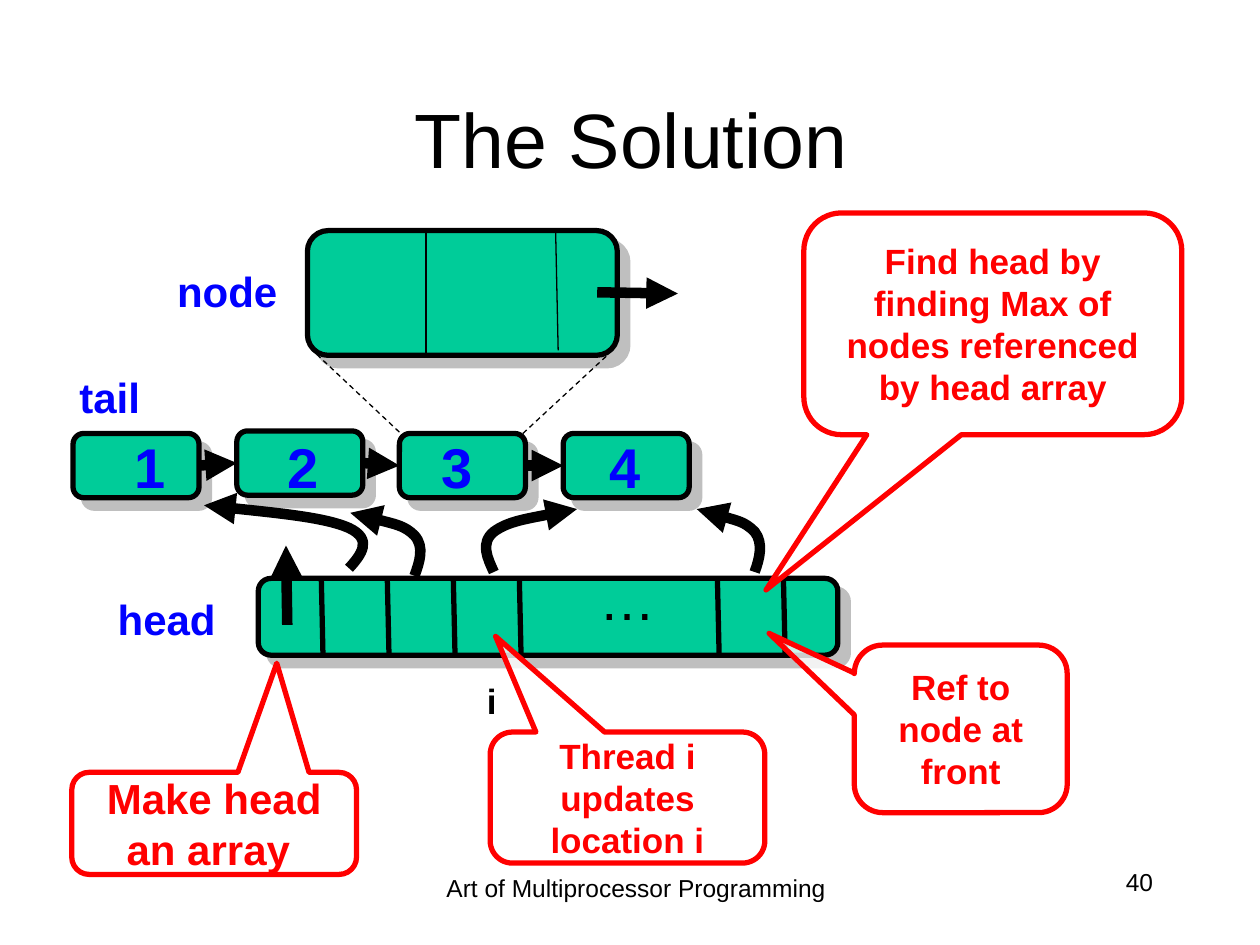
import pptx
import pptx.util
import pptx.dml.color
import pptx.enum.dml
import pptx.enum.shapes
import pptx.enum.text
import pptx.oxml
import pptx.oxml.ns
from lxml import etree

RGBColor = pptx.dml.color.RGBColor
GREEN = RGBColor(0x00, 0xCC, 0x99)
BLACK = RGBColor(0x00, 0x00, 0x00)
BLUE = RGBColor(0x00, 0x00, 0xFF)
RED = RGBColor(0xFF, 0x00, 0x00)
WHITE = RGBColor(0xFF, 0xFF, 0xFF)

SHAPE = pptx.enum.shapes.MSO_SHAPE
ALIGN = pptx.enum.text.PP_ALIGN
ANCHOR = pptx.enum.text.MSO_ANCHOR
qn = pptx.oxml.ns.qn

WIDTH = pptx.util.Inches(10)
HEIGHT = pptx.util.Inches(7.5)
CURVE_ROWS = (60.53, 59.07, 57.47, 56.27, 55.2, 54.53, 53.87)


def across(share):
    return round(WIDTH * share / 100)


def down(share):
    return round(HEIGHT * share / 100)


def frame(x, y, w, h):
    return across(x), down(y), across(w), down(h)


def style_line(s, color, width, arrow=False, dashed=False):
    s.line.color.rgb = color
    s.line.width = pptx.util.Pt(width)
    if dashed:
        s.line.dash_style = pptx.enum.dml.MSO_LINE.DASH
    if arrow:
        ln = s.element.spPr.find(qn("a:ln"))
        etree.SubElement(ln, qn("a:tailEnd"), type="triangle")


def write(tf, text, size, color, bold, align):
    p = tf.paragraphs[0]
    p.alignment = align
    r = p.add_run()
    r.text = text
    r.font.name = "Arial"
    r.font.size = pptx.util.Pt(size)
    r.font.bold = bold
    r.font.color.rgb = color


def add_label(shapes, box, text, size, color=BLUE, bold=True, align=ALIGN.RIGHT,
              wrap=False):
    tf = shapes.add_textbox(*frame(*box)).text_frame
    tf.word_wrap = wrap
    if not wrap:
        tf.auto_size = pptx.enum.text.MSO_AUTO_SIZE.SHAPE_TO_FIT_TEXT
    write(tf, text, size, color, bold, align)
    return tf


def add_block(shapes, *box):
    s = shapes.add_shape(SHAPE.ROUNDED_RECTANGLE, *frame(*box))
    s.fill.solid()
    s.fill.fore_color.rgb = GREEN
    style_line(s, BLACK, 3)
    s.shadow.inherit = False
    effects = s.element.spPr.find(qn("a:effectLst"))
    shadow = etree.SubElement(
        effects, qn("a:outerShdw"), blurRad="0", dist=str(pptx.util.Pt(8.5)),
        dir="2700000", algn="ctr", rotWithShape="0")
    color = etree.SubElement(shadow, qn("a:srgbClr"), val="808080")
    etree.SubElement(color, qn("a:alpha"), val="50000")
    return s


def add_line(shapes, x1, y1, x2, y2, width, arrow=False, dashed=False):
    s = shapes.add_connector(pptx.enum.shapes.MSO_CONNECTOR.STRAIGHT,
                             across(x1), down(y1), across(x2), down(y2))
    style_line(s, BLACK, width, arrow, dashed)
    etree.SubElement(s.element.spPr, qn("a:effectLst"))
    return s


def add_link(shapes, left, right):
    s = add_line(shapes, 0, 0, 1, 1, 6, arrow=True)
    s.begin_connect(left, 3)
    s.end_connect(right, 1)


def add_curve(shapes, columns, shift=0):
    points = [(across(x), down(y + shift)) for x, y in zip(columns, CURVE_ROWS)]
    builder = shapes.build_freeform(*points[0], scale=1.0)
    builder.add_line_segments(points[1:], close=False)
    s = builder.convert_to_shape()
    path = s.element.spPr.find(".//" + qn("a:path"))
    segments = path.findall(qn("a:lnTo"))
    for i in range(0, len(segments), 3):
        curve = etree.SubElement(path, qn("a:cubicBezTo"))
        for segment in segments[i:i + 3]:
            curve.append(segment[0])
            path.remove(segment)
    s.fill.background()
    style_line(s, BLACK, 6, arrow=True)
    s.shadow.inherit = False


def add_callout(shapes, box, tip, text, size):
    s = shapes.add_shape(SHAPE.ROUNDED_RECTANGULAR_CALLOUT, *frame(*box))
    s.adjustments[0], s.adjustments[1] = tip
    s.adjustments[2] = 0.17
    s.fill.solid()
    s.fill.fore_color.rgb = WHITE
    color = s.element.spPr.find(qn("a:solidFill"))[0]
    etree.SubElement(color, qn("a:alpha"), val="80000")
    style_line(s, RED, 3)
    s.shadow.inherit = False
    tf = s.text_frame
    tf.word_wrap = True
    tf.vertical_anchor = ANCHOR.MIDDLE
    write(tf, text, size, RED, True, ALIGN.CENTER)


def add_head_array(shapes):
    parts = shapes.add_group_shape().shapes
    add_block(parts, 20.5, 61.2, 46, 8.13)
    for cell in (0, 1, 2, 3, 6, 7):
        x = 25.5 + 5.24 * cell
        add_line(parts, x, 61.2, x + 0.14, 69.6, 3)
    add_label(parts, (46.6, 59.07, 6.5, 8.53), "…", 32, BLACK, False, ALIGN.LEFT)


def add_list(shapes):
    places = ((5.8, 45.87), (18.8, 45.6), (31.7, 45.87), (44.7, 45.87))
    blocks = [add_block(shapes, x, y, 10, 6.8) for x, y in places]
    for left, right in zip(blocks, blocks[1:]):
        add_link(shapes, left, right)
    for number, x in enumerate((9.6, 21.8, 34, 47.3), 1):
        add_label(shapes, (x, 45.07, 4.5, 8.53), str(number), 32)


def add_node(shapes):
    add_block(shapes, 24.4, 24.4, 24.6, 13.2)
    add_line(shapes, 31.7, 45.73, 24.9, 37.2, 0.75, dashed=True)
    add_line(shapes, 41.5, 45.87, 48.2, 37.6, 0.75, dashed=True)
    add_line(shapes, 44.1, 24.53, 44.3, 37.07, 0.75)
    add_line(shapes, 33.8, 24.67, 33.8, 37.33, 0.75)
    add_line(shapes, 47.4, 30.93, 53.8, 31.07, 6, arrow=True)


def add_references(shapes):
    add_curve(shapes, (59.9, 60.3, 60.6, 59.9, 59.1, 57.2, 55.3))
    add_curve(shapes, (39.2, 38.7, 38.1, 39.2, 40.3, 43.1, 45.8))
    add_curve(shapes, (32.9, 33.3, 33.7, 32.9, 32.1, 29.9, 27.8), 0.4)
    add_line(shapes, 22.8, 66.13, 22.7, 57.73, 6, arrow=True)
    add_curve(shapes, (27.7, 28.7, 29.6, 27.7, 25.9, 21, 16.2), -0.4)


def main():
    prs = pptx.Presentation()
    prs.slide_width, prs.slide_height = WIDTH, HEIGHT
    shapes = prs.slides.add_slide(prs.slide_layouts[6]).shapes

    title = add_label(shapes, (7.6, 6.27, 85, 16.67), "The Solution", 44,
                      BLACK, False, ALIGN.CENTER, wrap=True)
    title.vertical_anchor = ANCHOR.MIDDLE

    add_head_array(shapes)
    add_list(shapes)
    add_node(shapes)
    add_label(shapes, (8.2, 62.13, 9.9, 6.67), "head", 24)
    add_label(shapes, (5.2, 38.67, 6.9, 6.67), "tail", 24)
    add_label(shapes, (13, 27.47, 10, 6.67), "node", 24)
    add_label(shapes, (37.6, 71.2, 2.8, 5.73), "i", 20, BLACK)
    add_references(shapes)

    add_callout(shapes, (5.7, 81.73, 22.6, 10.8), (0.22, -1.57),
                "Make head an array ", 24)
    add_callout(shapes, (67.8, 68.27, 16.9, 17.73), (-0.9, -0.57),
                "Ref to node at front", 20)
    add_callout(shapes, (38.9, 77.47, 21.8, 13.87), (-0.48, -1.23),
                "Thread i updates location i", 20)
    add_callout(shapes, (63.8, 22.53, 30, 23.47), (-0.6, 1.2),
                "Find head by finding Max of nodes referenced by head array", 20)

    add_label(shapes, (71.7, 91.07, 20.8, 6.67), "40", 14, BLACK, False, wrap=True)
    add_label(shapes, (32.3, 91.73, 36.4, 6.67), "Art of Multiprocessor Programming",
              14, BLACK, False, ALIGN.CENTER, wrap=True)
    prs.save("out.pptx")


if __name__ == "__main__":
    main()
